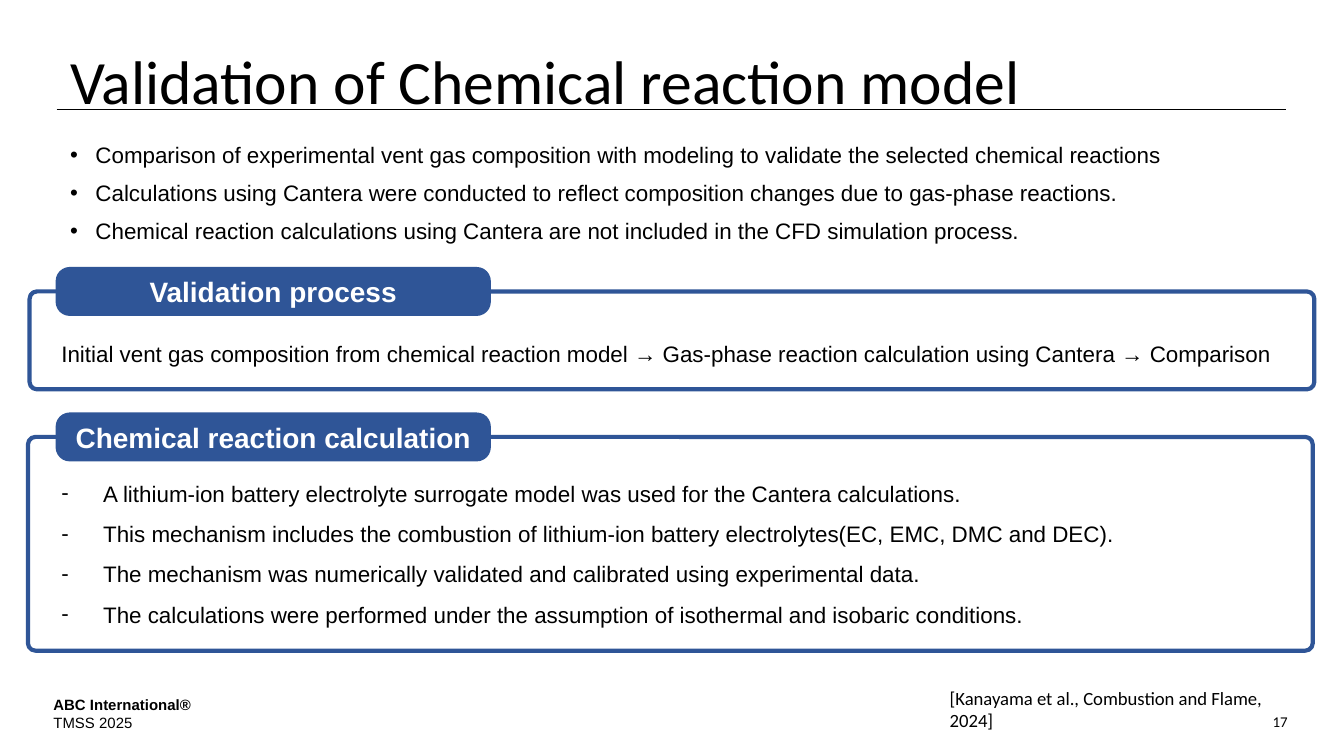
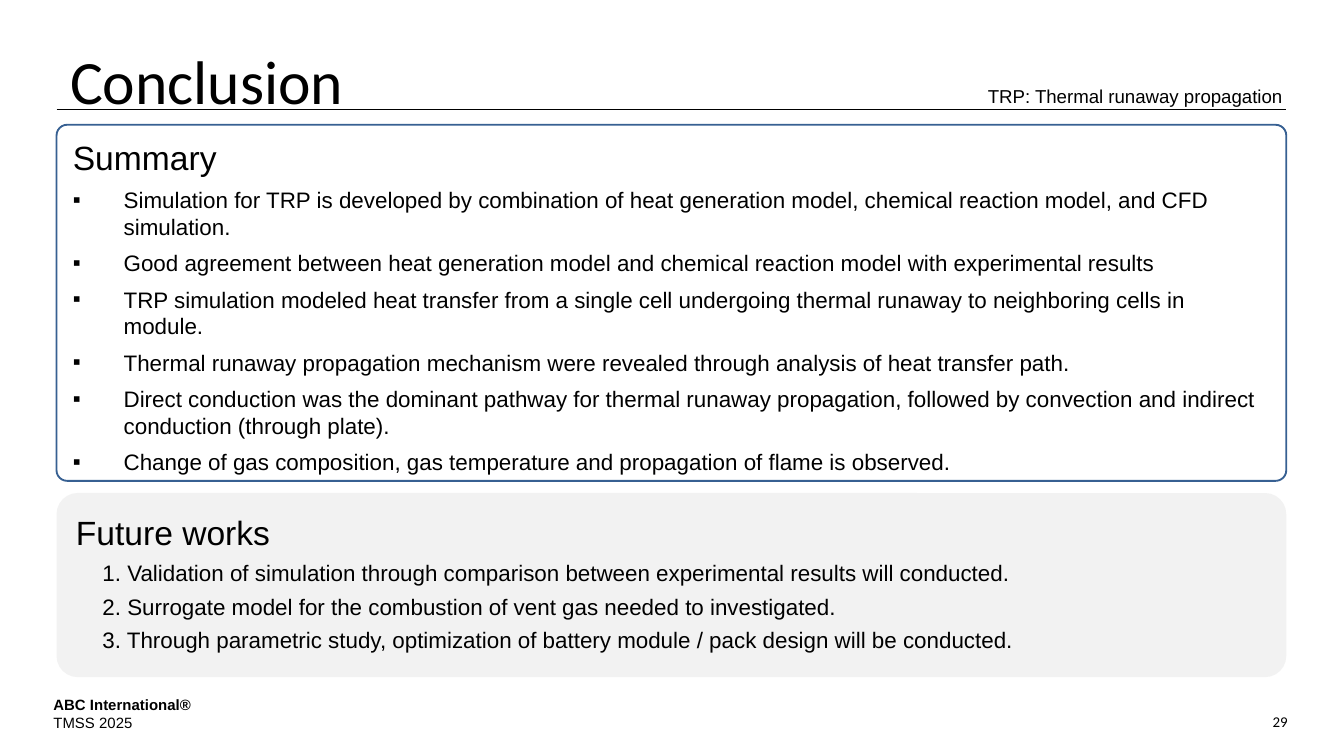
"""Builds the validation and conclusion slides of a battery simulation talk."""
from lxml import etree
from pptx import Presentation
from pptx.dml.color import RGBColor
from pptx.enum import shapes, text
from pptx.oxml import ns
from pptx.util import Cm, Pt

COLORS = {"ink": "000000", "paper": "FFFFFF", "blue": "2F5597",
          "outline": "376092", "panel": "F2F2F2"}

LEFT, WIDTH = 1.07, 23.24
TITLE_BOX = (LEFT, 0.76, WIDTH, 1.12)
BODY_BOX = (LEFT, 2.59, 23.29, 2.31)
RULE_Y = 2.06
ORGANISER_BOX = (0.76, 13.03, 7.29, 0.94)
NUMBER_BOX = (19.13, 13.34, 5.46, 0.61)
CITATION_BOX = (17.7, 12.85, 7.29, 0.69)
ABBREVIATION_BOX = (18.42, 1.47, 6.12, 0.69)
SUMMARY_BOX = (LEFT, 2.36, WIDTH, 6.73)
FUTURE_BOX = (LEFT, 9.32, WIDTH, 3.48)
FRAME_WIDTH = 24.28
HEADING_WIDTH, HEADING_HEIGHT = 8.19, 0.89

ORGANISER, EVENT = "ABC International®", "TMSS 2025"

VALIDATION = {
    "title": "Validation of Chemical reaction model",
    "number": "17",
    "points": [
        "Comparison of experimental vent gas composition with modeling to validate the selected chemical reactions",
        "Calculations using Cantera were conducted to reflect composition changes due to gas-phase reactions.",
        "Chemical reaction calculations using Cantera are not included in the CFD simulation process.",
    ],
    "sections": [
        {"heading": "Validation process", "left": 0.56, "top": 5.51, "height": 1.85,
         "text_top": 6.05, "format": {},
         "lines": ["Initial vent gas composition from chemical reaction model → "
                   "Gas-phase reaction calculation using Cantera → Comparison"]},
        {"heading": "Chemical reaction calculation", "left": 0.53, "top": 8.26, "height": 4.04,
         "text_top": 8.69, "format": {"bullet": "-", "indent": 0.79},
         "lines": [
             "A lithium-ion battery electrolyte surrogate model was used for the Cantera calculations.",
             "This mechanism includes the combustion of lithium-ion battery electrolytes(EC, EMC, DMC and DEC).",
             "The mechanism was numerically validated and calibrated using experimental data.",
             "The calculations were performed under the assumption of isothermal and isobaric conditions.",
         ]},
    ],
    "citation": "[Kanayama et al., Combustion and Flame, 2024]",
}

CONCLUSION = {
    "title": "Conclusion",
    "number": "29",
    "abbreviation": "TRP: Thermal runaway propagation",
    "summary": [
        "Simulation for TRP is developed by combination of heat generation model, chemical reaction model, and CFD simulation.",
        "Good agreement between heat generation model and chemical reaction model with experimental results",
        "TRP simulation modeled heat transfer from a single cell undergoing thermal runaway to neighboring cells in module.",
        "Thermal runaway propagation mechanism were revealed through analysis of heat transfer path.",
        "Direct conduction was the dominant pathway for thermal runaway propagation, followed by convection and indirect conduction (through plate).",
        "Change of gas composition, gas temperature and propagation of flame is observed.",
    ],
    "future": [
        "1. Validation of simulation through comparison between experimental results will conducted.",
        "2. Surrogate model for the combustion of vent gas needed to investigated.",
        "3. Through parametric study, optimization of battery module / pack design will be conducted.",
    ],
}


def color(name):
    return RGBColor.from_string(COLORS[name])


def place(part, box):
    part.left, part.top, part.width, part.height = map(Cm, box)


def write(frame, line, size=12, font="Arial", ink="ink", bold=False, align="LEFT",
          spacing=1.0, before=0, after=0, bullet=None, indent=0):
    """Add one formatted paragraph, filling the first one if it is still blank."""
    paragraph = frame.paragraphs[0] if not frame.text else frame.add_paragraph()
    run = paragraph.add_run()
    run.text = line
    run.font.size, run.font.name, run.font.bold = Pt(size), font, bold
    run.font.color.rgb = color(ink)
    paragraph.alignment = getattr(text.PP_ALIGN, align)
    paragraph.line_spacing = spacing
    paragraph.space_before, paragraph.space_after = Pt(before), Pt(after)
    properties = paragraph._p.get_or_add_pPr()
    properties.set("marL", str(Cm(indent)))
    properties.set("indent", str(-Cm(indent) if bullet else 0))
    if bullet:
        etree.SubElement(properties, ns.qn("a:buFont")).set("typeface", "Arial")
        etree.SubElement(properties, ns.qn("a:buChar")).set("char", bullet)


def text_box(slide, box, lines, wrap=True, **style):
    frame = slide.shapes.add_textbox(*map(Cm, box)).text_frame
    frame.word_wrap = wrap
    for line in lines:
        write(frame, line, **style)
    return frame


def rounded(slide, box, radius, fill=None, outline=None, weight=1, anchor="MIDDLE"):
    panel = slide.shapes.add_shape(shapes.MSO_SHAPE.ROUNDED_RECTANGLE, *map(Cm, box))
    panel.adjustments[0] = radius / min(box[2:])
    panel.shadow.inherit = False
    if fill:
        panel.fill.solid()
        panel.fill.fore_color.rgb = color(fill)
    else:
        panel.fill.background()
    if outline:
        panel.line.color.rgb = color(outline)
        panel.line.width = Pt(weight)
    else:
        panel.line.fill.background()
    panel.text_frame.word_wrap = True
    panel.text_frame.vertical_anchor = getattr(text.MSO_ANCHOR, anchor)
    return panel.text_frame


def start_slide(deck, layout, content):
    slide = deck.slides.add_slide(deck.slide_layouts[layout])
    rule = slide.shapes.add_connector(shapes.MSO_CONNECTOR.STRAIGHT, Cm(LEFT), Cm(RULE_Y),
                                      Cm(LEFT + WIDTH), Cm(RULE_Y))
    rule.line.color.rgb = color("ink")
    rule.line.width = Pt(0.5)
    etree.SubElement(rule._element.spPr, ns.qn("a:effectLst"))
    organiser = text_box(slide, ORGANISER_BOX, [ORGANISER], size=8, bold=True)
    write(organiser, EVENT, size=8)
    text_box(slide, NUMBER_BOX, [content["number"]], size=8, font="Calibri", align="RIGHT")
    title = slide.shapes.title
    place(title, TITLE_BOX)
    title.text_frame.auto_size = text.MSO_AUTO_SIZE.NONE
    title.text_frame.vertical_anchor = text.MSO_ANCHOR.TOP
    title.text_frame.margin_top = Cm(0.2)
    write(title.text_frame, content["title"], size=33, font="Calibri", spacing=0.9)
    return slide


def build_validation(deck):
    slide = start_slide(deck, 1, VALIDATION)
    points = slide.placeholders[1]
    place(points, BODY_BOX)
    points.text_frame.auto_size = text.MSO_AUTO_SIZE.NONE
    for point in VALIDATION["points"]:
        write(points.text_frame, point, align="JUSTIFY", spacing=0.9, before=7.5,
              bullet="•", indent=0.48)
    for section in VALIDATION["sections"]:
        top, height = section["top"], section["height"]
        rounded(slide, (section["left"], top, FRAME_WIDTH, height), 0.14,
                "paper", "blue", 2.25)
        text_box(slide, (0.91, section["text_top"], 23.55, 0.8 * len(section["lines"])),
                 section["lines"], spacing=1.5, **section["format"])
        heading = rounded(slide, (LEFT, top - HEADING_HEIGHT / 2, HEADING_WIDTH, HEADING_HEIGHT),
                          0.25, "blue", "blue")
        write(heading, section["heading"], size=15, ink="paper", bold=True, align="CENTER")
    text_box(slide, CITATION_BOX, [VALIDATION["citation"]], size=10, font="Calibri")


def build_conclusion(deck):
    slide = start_slide(deck, 5, CONCLUSION)
    summary = rounded(slide, SUMMARY_BOX, 0.2, outline="outline", anchor="TOP")
    summary.margin_top = Cm(0.17)
    write(summary, "Summary", size=18, after=5)
    for finding in CONCLUSION["summary"]:
        write(summary, finding, after=5, bullet="▪", indent=0.96)
    future = rounded(slide, FUTURE_BOX, 0.4, fill="panel")
    write(future, "Future works", size=18, spacing=0.9, after=5)
    for task in CONCLUSION["future"]:
        write(future, task, spacing=0.9, after=5, indent=0.5)
    text_box(slide, ABBREVIATION_BOX, [CONCLUSION["abbreviation"]], wrap=False, size=10)


def main():
    deck = Presentation()
    deck.slide_width, deck.slide_height = Cm(25.4), Cm(14.29)
    build_validation(deck)
    build_conclusion(deck)
    deck.save("out.pptx")


if __name__ == "__main__":
    main()
